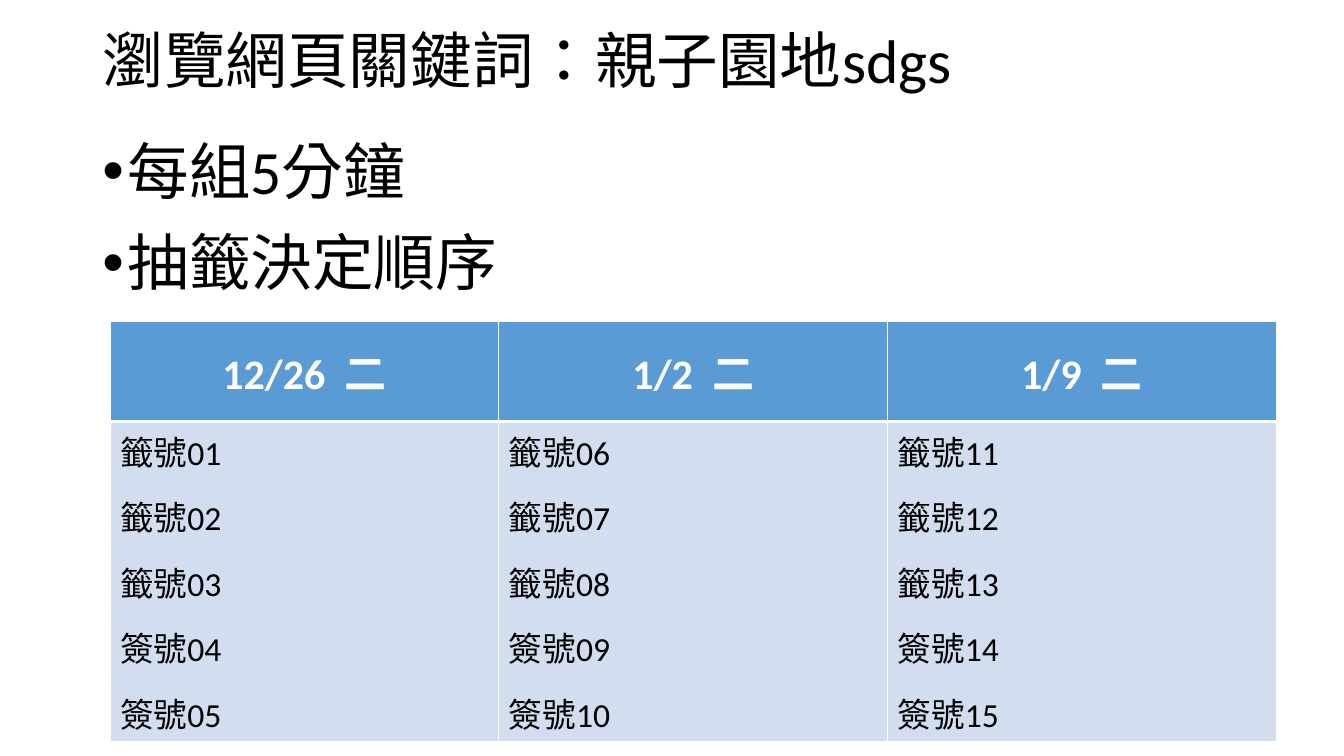
from pptx import Presentation
from pptx.dml.color import RGBColor
from pptx.enum import text as t
from pptx.oxml import ns
from pptx.util import Pt
from lxml import etree

BLACK = RGBColor(0, 0, 0)
WHITE = RGBColor(255, 255, 255)
HEADER_BLUE = RGBColor(0x5B, 0x9B, 0xD5)
PALE_BLUE = RGBColor(0xD2, 0xDE, 0xEF)

DATES = ["12/26  二", "1/2  二", "1/9  二"]
LOTS_PER_DAY = 5
FIRST_ALTERNATE_LOT = 4
HEADER_HEIGHT = 71.3
LOTS_HEIGHT = 229


def write(frame, lines, size, color=BLACK, bold=False, align=t.PP_ALIGN.LEFT,
          line_spacing=1.0, gaps=(0,)):
    for index, line in enumerate(lines):
        paragraph = frame.paragraphs[0] if index == 0 else frame.add_paragraph()
        paragraph.alignment = align
        paragraph.line_spacing = line_spacing
        paragraph.space_before = Pt(gaps[min(index, len(gaps) - 1)])
        run = paragraph.add_run()
        run.text = line
        run.font.name = "Calibri"
        run.font.size = Pt(size)
        run.font.bold = bold
        run.font.color.rgb = color
        run._r.get_or_add_rPr().set("lang", "zh-TW")


def place(shape, left, top, width, height):
    shape.left, shape.top = Pt(left), Pt(top)
    shape.width, shape.height = Pt(width), Pt(height)


def add_heading(slide, wording):
    heading = slide.shapes.title
    place(heading, 66, -7, 828, 104.4)
    frame = heading.text_frame
    frame.auto_size = t.MSO_AUTO_SIZE.NONE
    frame.vertical_anchor = t.MSO_ANCHOR.MIDDLE
    write(frame, [wording], 44, line_spacing=0.9)


def add_rules(slide, rules):
    frame = slide.shapes.add_textbox(Pt(66), Pt(97.2), Pt(828), Pt(342.7)).text_frame
    frame.word_wrap = True
    write(frame, rules, 44, line_spacing=0.9, gaps=(10, 18))
    for paragraph in frame.paragraphs:
        properties = paragraph._p.get_or_add_pPr()
        properties.set("marL", str(Pt(18)))
        properties.set("indent", str(Pt(-18)))
        etree.SubElement(properties, ns.qn("a:buFont")).set("typeface", "Arial")
        etree.SubElement(properties, ns.qn("a:buChar")).set("char", "•")


def add_border(cell, side, width):
    line = etree.SubElement(cell._tc.get_or_add_tcPr(), ns.qn("a:ln" + side))
    line.set("w", str(Pt(width)))
    fill = etree.SubElement(line, ns.qn("a:solidFill"))
    etree.SubElement(fill, ns.qn("a:srgbClr")).set("val", str(WHITE))


def format_cell(cell, fill, top, bottom):
    for side, width in (("L", 1), ("R", 1), ("T", top), ("B", bottom)):
        add_border(cell, side, width)
    cell.fill.solid()
    cell.fill.fore_color.rgb = fill
    cell.vertical_anchor = t.MSO_ANCHOR.MIDDLE


def lot_names(day):
    first = day * LOTS_PER_DAY
    return [("簽號" if order >= FIRST_ALTERNATE_LOT else "籤號") + f"{first + order:02d}"
            for order in range(1, LOTS_PER_DAY + 1)]


def add_schedule(slide):
    schedule = slide.shapes.add_table(
        2, len(DATES), Pt(78.7), Pt(229.7), Pt(833), Pt(HEADER_HEIGHT + LOTS_HEIGHT)).table
    schedule.rows[0].height = Pt(HEADER_HEIGHT)
    schedule.rows[1].height = Pt(LOTS_HEIGHT)
    for day, date in enumerate(DATES):
        header, lots = schedule.cell(0, day), schedule.cell(1, day)
        format_cell(header, HEADER_BLUE, top=1, bottom=3)
        format_cell(lots, PALE_BLUE, top=3, bottom=1)
        write(header.text_frame, [date], 30, WHITE, bold=True, align=t.PP_ALIGN.CENTER)
        write(lots.text_frame, lot_names(day), 24, gaps=(0, 12))


def main():
    deck = Presentation()
    deck.slide_width, deck.slide_height = Pt(960), Pt(540)
    slide = deck.slides.add_slide(deck.slide_layouts[5])
    add_heading(slide, "瀏覽網頁關鍵詞：親子園地sdgs")
    add_rules(slide, ["每組5分鐘", "抽籤決定順序"])
    add_schedule(slide)
    deck.save("out.pptx")


if __name__ == "__main__":
    main()
